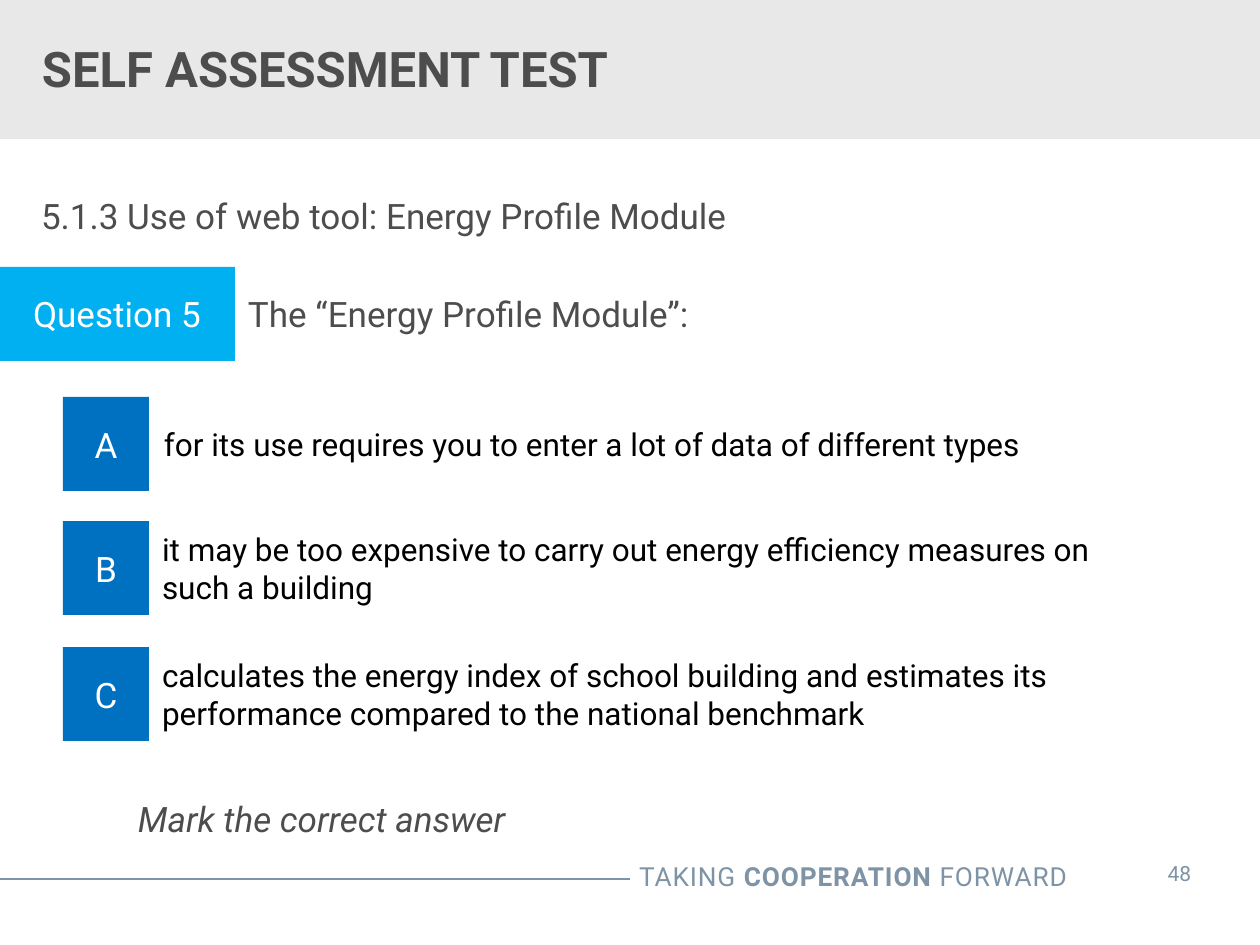
import dataclasses
import typing

import pptx
import pptx.dml.color
import pptx.enum.shapes
import pptx.enum.text
import pptx.oxml
import pptx.util

SCALE = 914400 / 126  # EMU in one px
ALIGN = pptx.enum.text.PP_ALIGN
ANCHOR = pptx.enum.text.MSO_ANCHOR


@dataclasses.dataclass(frozen=True)
class Theme:
    font: str = "Roboto"
    band: str = "E8E8E8"
    ink: str = "4D4D4E"
    answer_ink: str = "000000"
    label_ink: str = "FFFFFF"
    footer: str = "7E93A5"
    question: str = "00B0F0"
    letter: str = "0070C0"
    title_size: int = 28
    body_size: int = 20
    answer_size: int = 18
    footer_size: int = 15
    number_size: int = 12


@dataclasses.dataclass(frozen=True)
class Area:
    left: int
    top: int
    width: int
    height: int

    def emu(self) -> list[int]:
        return [px(value) for value in dataclasses.astuple(self)]


@dataclasses.dataclass(frozen=True)
class Span:
    text: str
    bold: bool = False
    italic: bool = False


@dataclasses.dataclass(frozen=True)
class Style:
    size: int
    color: str
    align: ALIGN = ALIGN.LEFT
    anchor: ANCHOR = ANCHOR.MIDDLE
    inset: tuple[int, int] = (13, 6)
    spacing: int = 0  # hundredths of a point


@dataclasses.dataclass(frozen=True)
class Answer:
    letter: str
    text: str
    top: int
    left: int


THEME = Theme()
LABEL = Style(THEME.body_size, THEME.label_ink, ALIGN.CENTER)
BODY = Style(THEME.body_size, THEME.ink)
PLAIN = Style(THEME.body_size, THEME.ink, anchor=ANCHOR.TOP, inset=(0, 0))
CHOICE = Style(THEME.answer_size, THEME.answer_ink)
ROW_HEIGHT = 94

ANSWERS = [
    Answer("A", "for its use requires you to enter a lot of data of different types", 397, 151),
    Answer("B", "it may be too expensive to carry out energy efficiency measures on such a building",
           521, 149),
    Answer("C", "calculates the energy index of school building and estimates its performance "
                "compared to the national benchmark", 647, 149),
]


def px(value: int) -> int:
    return round(value * SCALE)


def rgb(color: str) -> pptx.dml.color.RGBColor:
    return pptx.dml.color.RGBColor.from_string(color)


def assign(target: typing.Any, values: dict[str, typing.Any]) -> None:
    for name, value in values.items():
        setattr(target, name, value)


def write(box: typing.Any, spans: list[Span], style: Style) -> None:
    across, down = (px(value) for value in style.inset)
    frame = box.text_frame
    assign(frame, {"word_wrap": True, "vertical_anchor": style.anchor,
                   "margin_left": across, "margin_right": across,
                   "margin_top": down, "margin_bottom": down})
    para = frame.paragraphs[0]
    para.alignment = style.align
    for span in spans:
        run = para.add_run()
        run.text = span.text
        assign(run.font, {"name": THEME.font, "size": pptx.util.Pt(style.size),
                          "bold": span.bold, "italic": span.italic})
        run.font.color.rgb = rgb(style.color)
        if style.spacing:
            run._r.get_or_add_rPr().set("spc", str(style.spacing))


def add_text(page: typing.Any, area: Area, spans: list[Span], style: Style) -> None:
    write(page.shapes.add_textbox(*area.emu()), spans, style)


def add_block(page: typing.Any, area: Area, fill: str, label: str = "") -> None:
    box = page.shapes.add_shape(pptx.enum.shapes.MSO_SHAPE.RECTANGLE, *area.emu())
    box.shadow.inherit = False
    box.fill.solid()
    box.fill.fore_color.rgb = rgb(fill)
    box.line.fill.background()
    if label:
        write(box, [Span(label)], LABEL)


def add_rule(page: typing.Any, left: int, right: int, top: int) -> None:
    rule = page.shapes.add_connector(pptx.enum.shapes.MSO_CONNECTOR.STRAIGHT,
                                     px(left), px(top), px(right), px(top))
    rule.line.color.rgb = rgb(THEME.footer)
    rule.line.width = pptx.util.Pt(0.75)
    properties = rule._element.spPr
    properties.append(properties.makeelement(pptx.oxml.ns.qn("a:effectLst"), {}))


def add_answer(page: typing.Any, answer: Answer) -> None:
    add_block(page, Area(63, answer.top, 86, ROW_HEIGHT), THEME.letter, answer.letter)
    add_text(page, Area(answer.left, answer.top, 1027, ROW_HEIGHT), [Span(answer.text)], CHOICE)


def main() -> None:
    deck = pptx.Presentation()
    assign(deck, {"slide_width": px(1260), "slide_height": px(945)})
    page = deck.slides.add_slide(deck.slide_layouts[6])

    # Footer
    add_rule(page, -1, 630, 879)
    add_text(page, Area(489, 854, 591, 44),
             [Span("TAKING "), Span("COOPERATION", bold=True), Span(" FORWARD")],
             Style(THEME.footer_size, THEME.footer, ALIGN.RIGHT, ANCHOR.TOP, spacing=50))
    add_text(page, Area(1133, 848, 93, 50), [Span("48")],
             Style(THEME.number_size, THEME.footer, ALIGN.CENTER, ANCHOR.TOP, (13, 13)))

    # Title band
    add_block(page, Area(0, 0, 1260, 139), THEME.band)
    add_text(page, Area(0, 20, 907, 95), [Span("SELF ASSESSMENT TEST", bold=True)],
             Style(THEME.title_size, THEME.ink, inset=(42, 6)))

    # Topic and question
    add_text(page, Area(41, 194, 1179, 43),
             [Span("5.1.3 Use of web tool: Energy Profile Module")], PLAIN)
    add_block(page, Area(-1, 267, 236, ROW_HEIGHT), THEME.question, "Question 5")
    add_text(page, Area(235, 267, 1025, ROW_HEIGHT),
             [Span("The “Energy Profile Module”:")], BODY)

    # Answers and instruction
    for answer in ANSWERS:
        add_answer(page, answer)
    add_text(page, Area(138, 797, 1082, 43),
             [Span("Mark the correct answer", italic=True)], PLAIN)

    deck.save("out.pptx")


if __name__ == "__main__":
    main()
